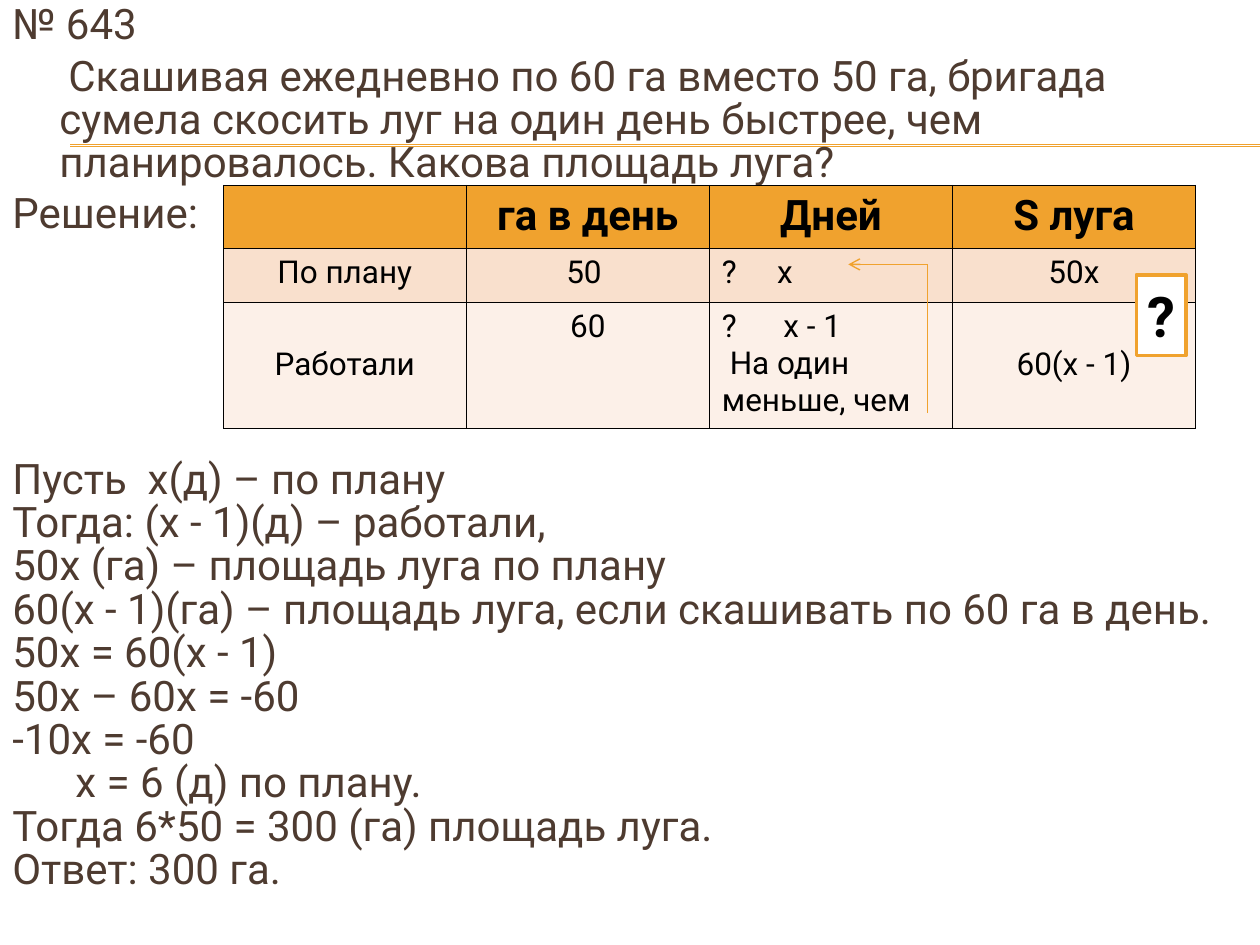
from lxml import etree
from pptx import Presentation
from pptx.dml.color import RGBColor
from pptx.enum.shapes import MSO_CONNECTOR, MSO_SHAPE
from pptx.enum.text import MSO_ANCHOR, PP_ALIGN
from pptx.oxml.ns import qn
from pptx.util import Cm, Pt

LINE = MSO_CONNECTOR.STRAIGHT
RECT = MSO_SHAPE.RECTANGLE
TOP, MIDDLE = MSO_ANCHOR.TOP, MSO_ANCHOR.MIDDLE
LEFT, CENTER = PP_ALIGN.LEFT, PP_ALIGN.CENTER

ORANGE = RGBColor(0xF0, 0xA2, 0x2E)
PEACH = RGBColor(0xF9, 0xE0, 0xCD)
CREAM = RGBColor(0xFC, 0xF0, 0xE8)
BROWN = RGBColor(0x4E, 0x3B, 0x30)
BLACK = RGBColor(0, 0, 0)
WHITE = RGBColor(0xFF, 0xFF, 0xFF)

BODY = {"name": "Roboto", "size": Pt(24)}
HEAD = {"name": "Roboto", "size": Pt(24), "bold": True}
CELL = {"name": "Roboto", "size": Pt(18), "bold": False}
MARK = {"name": "Roboto", "size": Pt(32), "bold": True}

# Text, left margin and first-line indent in cm, line pitch and gap in points
TASK = [
    ("№ 643", 0, 0, 24, 4.8),
    ("Скашивая ежедневно по 60 га вместо 50 га, бригада сумела скосить луг "
     "на один день быстрее, чем планировалось. Какова площадь луга?",
     0.95, 0.18, 24.8, 4.5),
    ("Решение:", 0, 0, 24, 4.8),
]
STEPS = [
    ("Пусть  х(д) – по плану", 0),
    ("Тогда: (х - 1)(д) – работали,", 0),
    ("50х (га) – площадь луга по плану", 0),
    ("60(х - 1)(га) – площадь луга, если скашивать по 60 га в день.", 0),
    ("50х = 60(х - 1)", 0),
    ("50х – 60х = -60", 0),
    ("-10х = -60", 0),
    ("х = 6 (д) по плану.", 1.27),
    ("Тогда 6*50 = 300 (га) площадь луга.", 0),
    ("Ответ: 300 га.", 0),
]

DAYS = 2  # column with left-aligned text
ROWS = [
    (1.24, ORANGE, HEAD, ["", "га в день", "Дней", "S луга"]),
    (1.09, PEACH, CELL, ["По плану", "50 ", "?\tx", "50x"]),
    (2.46, CREAM, CELL,
     ["Работали", "60", "?\tx - 1\n На один меньше, чем", "60(x - 1)"]),
]
TABS = {1: 1.11, 2: 1.24}  # tab stop in cm by row
CENTRED = {(2, 0), (2, 3)}  # cells centred vertically


def style(par, look, color):
    for run in par.runs:
        for key, value in look.items():
            setattr(run.font, key, value)
        run.font.color.rgb = color


def add_line(slide, start, end, width, arrow=False):
    line = slide.shapes.add_connector(
        LINE, *(Cm(v) for v in (*start, *end)))
    line.line.color.rgb = ORANGE
    line.line.width = Pt(width)
    if arrow:
        etree.SubElement(line.line._get_or_add_ln(), qn("a:tailEnd"),
                         type="arrow")
    etree.SubElement(line._element.spPr, qn("a:effectLst"))


def add_rule(slide, left, top, right):
    for shift in (0, 0.03):
        add_line(slide, (left, top + shift), (right, top + shift), 0.75)


def add_body(slide, box, items):
    frame = slide.shapes.add_textbox(*(Cm(v) for v in box)).text_frame
    frame.word_wrap = True
    for i, (text, margin, indent, pitch, gap) in enumerate(items):
        par = frame.paragraphs[0] if i == 0 else frame.add_paragraph()
        par.text = text
        par.line_spacing = Pt(pitch)
        par.space_before = Pt(gap)
        props = par._p.get_or_add_pPr()
        props.set("marL", str(Cm(margin)))
        props.set("indent", str(Cm(indent)))
        style(par, BODY, BROWN)


def add_borders(cell):
    """Give the cell thin black edges, placed before its fill."""
    props = cell._tc.get_or_add_tcPr()
    for i, side in enumerate(("a:lnL", "a:lnR", "a:lnT", "a:lnB")):
        edge = etree.Element(qn(side), w=str(Pt(0.25)))
        fill = etree.SubElement(edge, qn("a:solidFill"))
        etree.SubElement(fill, qn("a:srgbClr"), val=str(BLACK))
        props.insert(i, edge)


def add_tab(par, pos):
    tabs = etree.SubElement(par._p.get_or_add_pPr(), qn("a:tabLst"))
    etree.SubElement(tabs, qn("a:tab"), pos=str(Cm(pos)), algn="l")


def add_grid(slide, box):
    shape = slide.shapes.add_table(len(ROWS), 4, *(Cm(v) for v in box))
    table = shape.table
    for col in table.columns:
        col.width = Cm(box[2] / 4)
    for r, (height, fill, look, texts) in enumerate(ROWS):
        table.rows[r].height = Cm(height)
        for c, text in enumerate(texts):
            cell = table.cell(r, c)
            cell.text = text
            cell.fill.solid()
            cell.fill.fore_color.rgb = fill
            cell.vertical_anchor = MIDDLE if (r, c) in CENTRED else TOP
            add_borders(cell)
            for par in cell.text_frame.paragraphs:
                left = c == DAYS and r > 0
                par.alignment = LEFT if left else CENTER
                if "\t" in text:
                    add_tab(par, TABS[r])
                style(par, look, BLACK)


def add_link(slide, box):
    """Draw the bent arrow from the lower right to the upper left of the box."""
    left, top, width, height = box
    corner = (left + width, top)
    add_line(slide, (left + width, top + height), corner, 0.79)
    add_line(slide, corner, (left, top), 0.79, arrow=True)


def add_mark(slide, box):
    mark = slide.shapes.add_shape(RECT, *(Cm(v) for v in box))
    mark.shadow.inherit = False
    mark.fill.solid()
    mark.fill.fore_color.rgb = WHITE
    mark.line.color.rgb = ORANGE
    mark.line.width = Pt(2)
    frame = mark.text_frame
    frame.word_wrap = False
    frame.vertical_anchor = MIDDLE
    par = frame.paragraphs[0]
    par.text = "?"
    par.alignment = CENTER
    style(par, MARK, BLACK)


def main():
    deck = Presentation()
    deck.slide_width, deck.slide_height = Cm(25.4), Cm(19.05)
    slide = deck.slides.add_slide(deck.slide_layouts[6])
    add_rule(slide, 1.42, 2.92, 25.4)
    add_body(slide, (0, 0, 24.7, 4.9), TASK)
    add_body(slide, (0, 9.3, 24.9, 9),
             [(text, margin, 0, 20, 4.8) for text, margin in STEPS])
    add_grid(slide, (4.5, 3.73, 19.6, 4.79))
    add_link(slide, (17.1, 5.33, 1.6, 3))
    add_mark(slide, (22.91, 5.54, 1, 1.63))
    deck.save("out.pptx")


if __name__ == "__main__":
    main()
